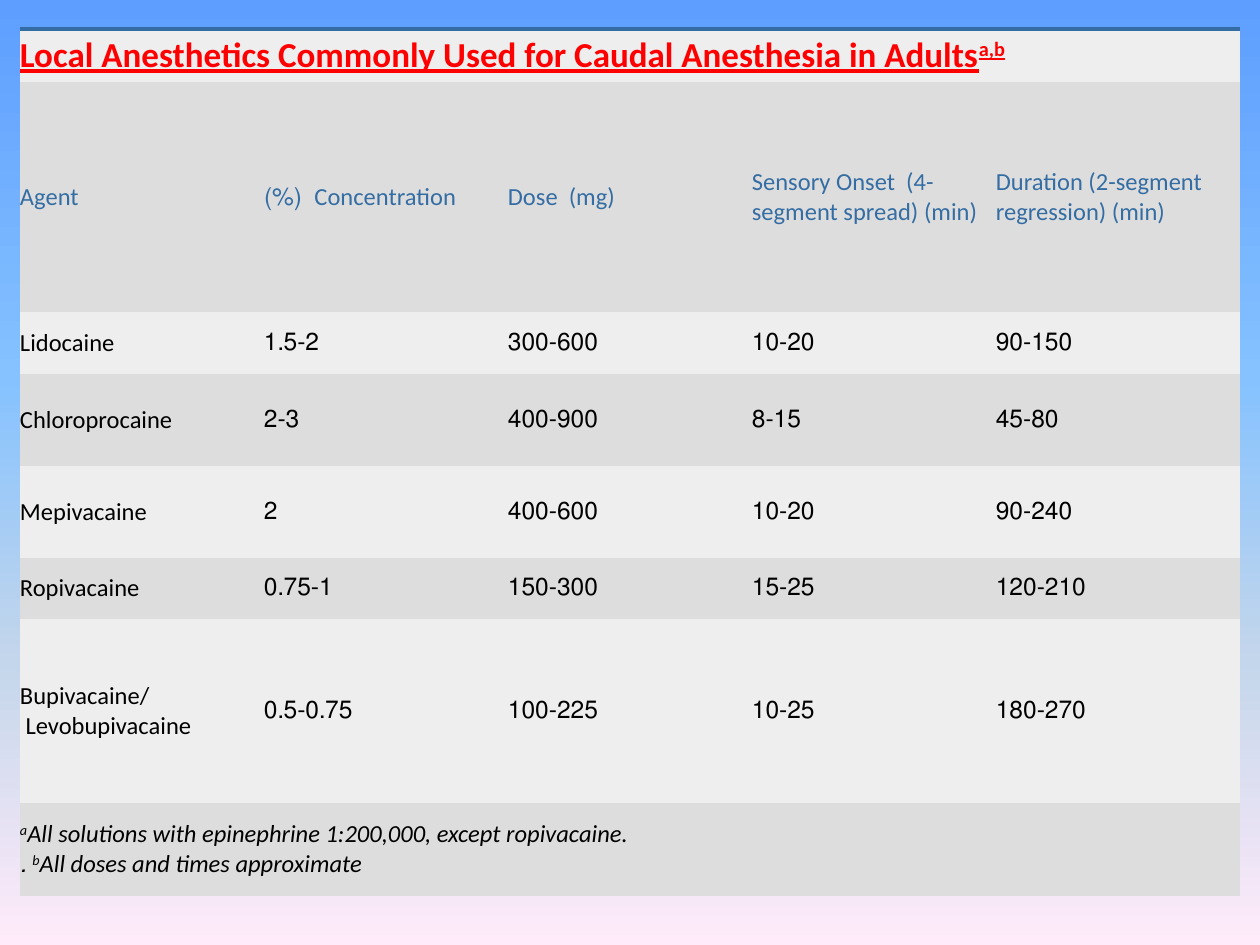
from lxml.etree import SubElement
from pptx import Presentation
from pptx.dml.color import RGBColor
from pptx.enum.text import MSO_VERTICAL_ANCHOR as Anchor, PP_PARAGRAPH_ALIGNMENT as Align
from pptx.oxml.ns import qn
from pptx.util import Emu, Pt

PX = 914400 // 126
RED = RGBColor(0xFF, 0x00, 0x00)
BLUE = RGBColor(0x34, 0x6D, 0xA3)
BLACK = RGBColor(0x00, 0x00, 0x00)
LIGHT = RGBColor(0xEE, 0xEE, 0xEE)
DARK = RGBColor(0xDD, 0xDD, 0xDD)
SKY = [
    (0, RGBColor(0x5E, 0x9E, 0xFF)),
    (40, RGBColor(0x85, 0xC2, 0xFF)),
    (70, RGBColor(0xC4, 0xD6, 0xEB)),
    (100, RGBColor(0xFF, 0xEB, 0xFA)),
]
FONT = "Calibri"
PLAIN_STYLE = "{2D5ABB26-0587-4C30-8999-92F81FD0307C}"
COLUMN_WIDTH = 244
ROW_HEIGHTS = [53, 230, 62, 92, 92, 61, 184, 93]
HEADINGS = [
    " Agent",
    " Concentration  (%)",
    " Dose  (mg)",
    " Sensory Onset  (4-segment spread) (min)",
    " Duration (2-segment  regression) (min)",
]
AGENTS = [
    (" Lidocaine", " 1.5-2", " 300-600", " 10-20", " 90-150"),
    (" Chloroprocaine", " 2-3", " 400-900", " 8-15", " 45-80"),
    (" Mepivacaine", " 2", " 400-600", " 10-20", " 90-240"),
    (" Ropivacaine", " 0.75-1", " 150-300", " 15-25", " 120-210"),
    (" Bupivacaine/\n Levobupivacaine", " 0.5-0.75", " 100-225", " 10-25", " 180-270"),
]


def px(length):
    return Emu(length * PX)


def paint_background(slide):
    fill = slide.background.fill
    fill.gradient()
    fill.gradient_angle = 270
    stops = slide.element.find(".//" + qn("a:gsLst"))
    for stop in list(stops):
        stops.remove(stop)
    for percent, color in SKY:
        stop = SubElement(stops, qn("a:gs"), pos=str(percent * 1000))
        SubElement(stop, qn("a:srgbClr"), val=str(color))


def add_text(paragraph, text, color, size=14, raised=False, **style):
    for index, line in enumerate(text.split("\n")):
        if index:
            paragraph.add_line_break()
        run = paragraph.add_run()
        run.text = line
        font = run.font
        font.name, font.size = FONT, Pt(size)
        font.color.rgb = color
        for name, value in style.items():
            setattr(font, name, value)
        if raised:
            run._r.get_or_add_rPr().set("baseline", "30000")


def right_to_left(cell):
    paragraph = cell.text_frame.paragraphs[0]
    paragraph._p.get_or_add_pPr().set("rtl", "1")
    return paragraph


def add_top_border(cell, color, width):
    border = SubElement(cell._tc.get_or_add_tcPr(), qn("a:lnT"), w=str(Pt(width)))
    SubElement(SubElement(border, qn("a:solidFill")), qn("a:srgbClr"), val=str(color))
    cell._tc.tcPr.insert(0, border)


def add_grid(slide):
    rows, columns = len(ROW_HEIGHTS), len(HEADINGS)
    frame = slide.shapes.add_table(
        rows, columns, px(20), px(29), px(COLUMN_WIDTH * columns), px(sum(ROW_HEIGHTS))
    )
    grid = frame.table
    grid.first_row = grid.horz_banding = False
    grid._tbl.tblPr.find(qn("a:tableStyleId")).text = PLAIN_STYLE
    for column in grid.columns:
        column.width = px(COLUMN_WIDTH)
    for index, (row, height) in enumerate(zip(grid.rows, ROW_HEIGHTS)):
        row.height = px(height)
        for cell in row.cells:
            cell.margin_left = cell.margin_right = cell.margin_top = cell.margin_bottom = 0
            cell.vertical_anchor = Anchor.MIDDLE
            cell.fill.solid()
            cell.fill.fore_color.rgb = DARK if index % 2 else LIGHT
    for index in (0, rows - 1):
        grid.cell(index, 0).merge(grid.cell(index, columns - 1))
    return grid


def fill_title(grid):
    for cell in grid.rows[0].cells:
        add_top_border(cell, BLUE, 3)
    title = grid.cell(0, 0).text_frame.paragraphs[0]
    title.alignment = Align.JUSTIFY
    style = dict(size=20, bold=True, underline=True)
    add_text(title, "Local Anesthetics Commonly Used for Caudal Anesthesia in Adults", RED, **style)
    add_text(title, "a,b", RED, raised=True, **style)


def fill_agents(grid):
    for row, texts in enumerate([HEADINGS, *AGENTS], start=1):
        for column, text in enumerate(texts):
            add_text(right_to_left(grid.cell(row, column)), text, BLUE if row == 1 else BLACK)


def fill_footnotes(grid):
    notes = right_to_left(grid.cell(len(ROW_HEIGHTS) - 1, 0))
    for text, raised in [
        (" a", True),
        ("All solutions with epinephrine 1:200,000, except ropivacaine.\n ", False),
        ("b", True),
        ("All doses and times approximate.", False),
    ]:
        add_text(notes, text, BLACK, raised=raised, italic=True)


def main():
    deck = Presentation()
    deck.slide_width, deck.slide_height = px(1260), px(945)
    slide = deck.slides.add_slide(deck.slide_layouts[6])
    paint_background(slide)
    grid = add_grid(slide)
    fill_title(grid)
    fill_agents(grid)
    fill_footnotes(grid)
    deck.save("out.pptx")


if __name__ == "__main__":
    main()
